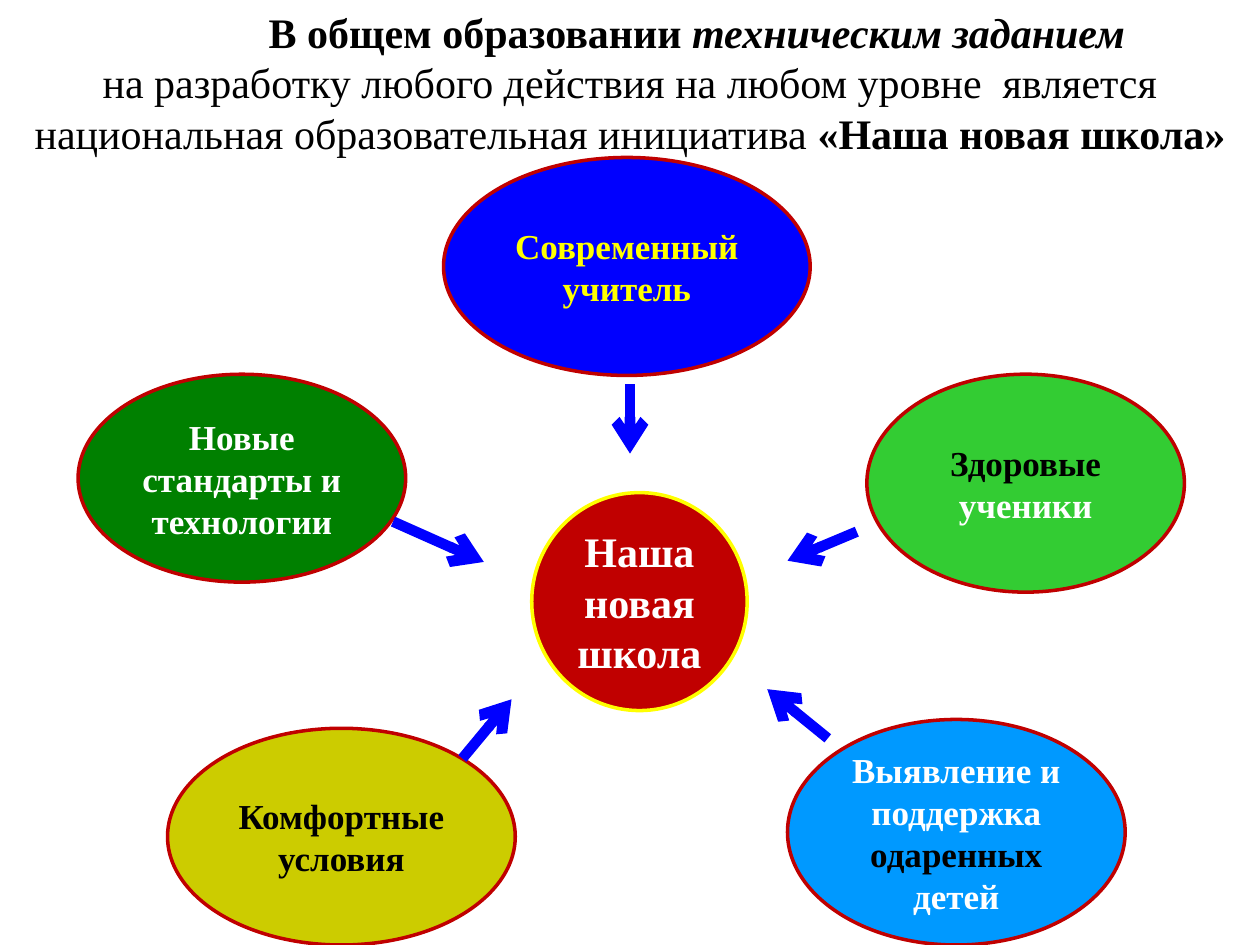
"""Build the slide about the five directions of the new school initiative."""
from lxml.etree import SubElement
from pptx import Presentation
from pptx.dml.color import RGBColor
from pptx.enum.shapes import MSO_CONNECTOR as CONN, MSO_SHAPE as SHAPE
from pptx.enum.text import MSO_ANCHOR as ANCHOR, PP_ALIGN as ALIGN
from pptx.oxml.ns import qn
from pptx.util import Inches, Pt


def rgb(value):
    return RGBColor.from_string(value)


def add_run(p, text, size, color, bold=False, italic=False):
    r = p.add_run()
    r.text = text
    r.font.name = "Times New Roman"
    r.font.size = Pt(size)
    r.font.bold = bold
    r.font.italic = italic
    r.font.color.rgb = rgb(color)


prs = Presentation()
prs.slide_width = Inches(10)
prs.slide_height = Inches(7.5)
s = prs.slides.add_slide(prs.slide_layouts[6])

WHITE, BLACK, YELLOW, RED, BLUE = "FFFFFF", "000000", "FFFF00", "C00000", "0000FF"

ellipses = [
    ((4.22, 3.91, 1.71, 1.73), RED, YELLOW, 24, [("Наша новая школа", WHITE)]),
    ((3.52, 1.25, 2.91, 1.73), BLUE, RED, 20, [("Современный учитель", YELLOW)]),
    ((6.25, 5.71, 2.68, 1.79), "0099FF", RED, 20,
     [("Выявление и поддержка ", WHITE), ("одаренных ", BLACK), ("детей", WHITE)]),
    ((6.88, 2.97, 2.52, 1.73), "33CC33", RED, 20,
     [("Здоровые ", BLACK), ("ученики", WHITE)]),
    ((0.62, 2.97, 2.6, 1.65), "008000", RED, 20,
     [("Новые стандарты и технологии", WHITE)]),
    ((1.33, 5.78, 2.76, 1.72), "CCCC00", RED, 20, [("Комфортные условия", BLACK)]),
]
for box, fill, line, size, runs in ellipses:
    sp = s.shapes.add_shape(SHAPE.OVAL, *map(Inches, box))
    sp.shadow.inherit = False
    sp.fill.solid()
    sp.fill.fore_color.rgb = rgb(fill)
    sp.line.color.rgb = rgb(line)
    sp.line.width = Pt(2)
    tf = sp.text_frame
    tf.word_wrap = True
    tf.vertical_anchor = ANCHOR.MIDDLE
    p = tf.paragraphs[0]
    p.alignment = ALIGN.CENTER
    for text, color in runs:
        add_run(p, text, size, color, bold=True)

arrows = [
    (5, 3.05, 5, 3.6),
    (3.67, 6.02, 4.06, 5.55),
    (6.57, 5.86, 6.09, 5.47),
    (3.12, 4.14, 3.84, 4.46),
    (6.8, 4.22, 6.25, 4.45),
]
for ends in arrows:
    arrow = s.shapes.add_connector(CONN.STRAIGHT, *map(Inches, ends))
    arrow.line.color.rgb = rgb(BLUE)
    arrow.line.width = Pt(6)
    SubElement(arrow.line._get_or_add_ln(), qn("a:tailEnd"), type="arrow")
    SubElement(arrow._element.spPr, qn("a:effectLst"))

title = [
    (1.06, [("В общем образовании ", True, False), ("техническим заданием", True, True)]),
    (0, [("на разработку любого действия на любом уровне  является", False, False)]),
    (0, [("национальная образовательная инициатива ", False, False),
         ("«Наша новая школа»", True, False)]),
]
tf = s.shapes.add_textbox(0, 0, Inches(10), Inches(1.31)).text_frame
tf.word_wrap = True
for i, (indent, runs) in enumerate(title):
    p = tf.add_paragraph() if i else tf.paragraphs[0]
    p.alignment = ALIGN.CENTER
    p._p.get_or_add_pPr().set("marL", str(Inches(indent)))
    for text, bold, italic in runs:
        add_run(p, text, 24, BLACK, bold, italic)

prs.save("out.pptx")
